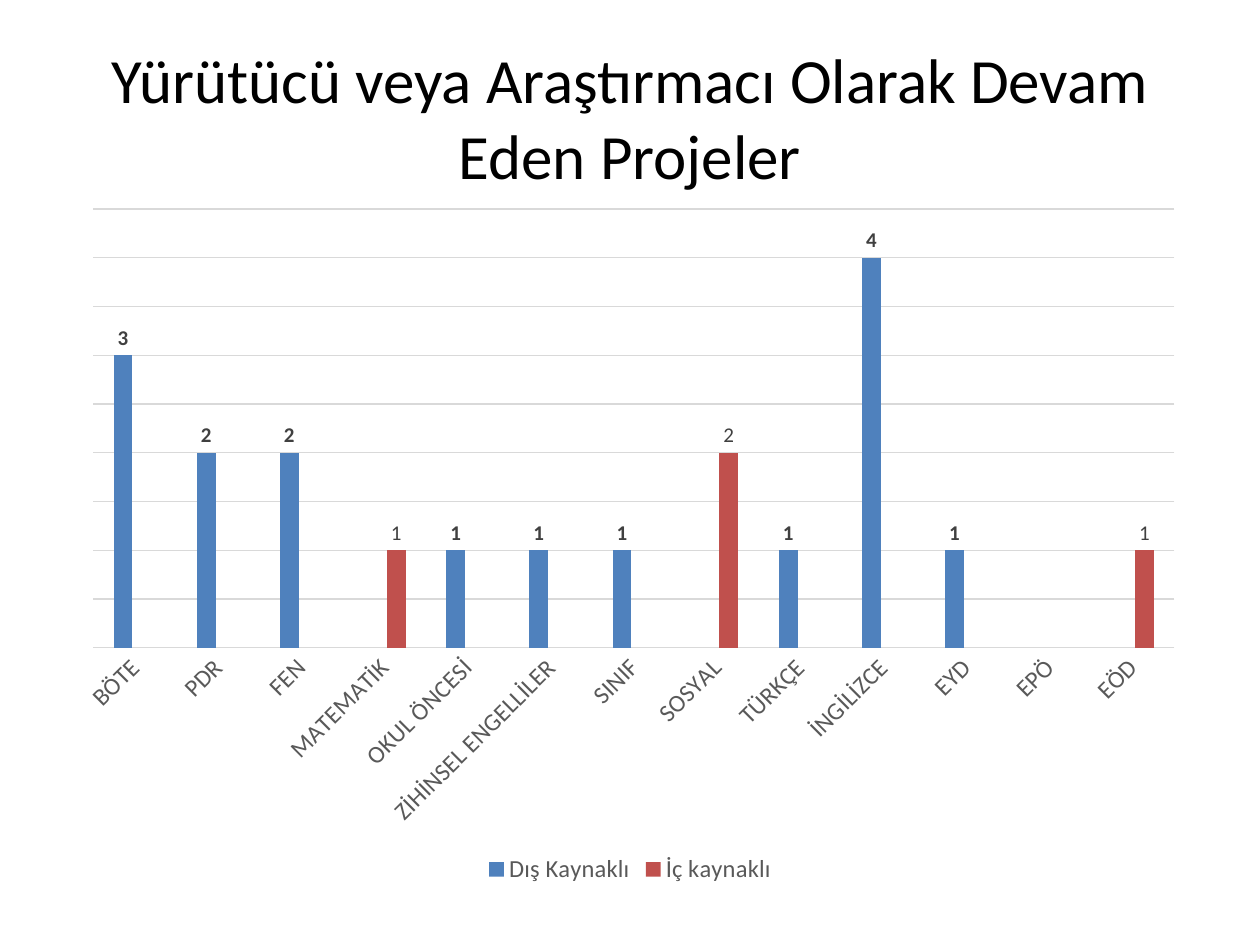
from dataclasses import dataclass

import pptx
import pptx.chart.data
import pptx.dml.color
import pptx.enum.chart
import pptx.enum.text
import pptx.util
from pptx.util import Pt


@dataclass(frozen=True)
class Theme:
    font: str = "Calibri"
    title: str = "000000"
    axis_text: str = "595959"
    label_text: str = "404040"
    grid: str = "D9D9D9"
    external: str = "4F81BD"
    internal: str = "C0504D"
    title_size: int = 36
    axis_size: int = 14
    label_size: int = 12


theme = Theme()


def set_font(font, size, color, bold=False):
    font.name = theme.font
    font.size = Pt(size)
    font.bold = bold
    font.color.rgb = pptx.dml.color.RGBColor.from_string(color)


def add_text(slide, text, *, left, top, width, height, size, color):
    """Add a wrapped text box, centred both ways."""
    shape = slide.shapes.add_textbox(Pt(left), Pt(top), Pt(width), Pt(height))
    frame = shape.text_frame
    frame.word_wrap = True
    frame.vertical_anchor = pptx.enum.text.MSO_ANCHOR.MIDDLE
    paragraph = frame.paragraphs[0]
    paragraph.alignment = pptx.enum.text.PP_ALIGN.CENTER
    run = paragraph.add_run()
    run.text = text
    set_font(run.font, size, color)


presentation = pptx.Presentation()
presentation.slide_width = Pt(720)
presentation.slide_height = Pt(540)
slide = presentation.slides.add_slide(presentation.slide_layouts[6])

add_text(slide, "Yürütücü veya Araştırmacı Olarak Devam Eden Projeler",
         left=36, top=21.6, width=648, height=90,
         size=theme.title_size, color=theme.title)

# Department, externally funded projects, internally funded projects
projects = [
    ("BÖTE", 3, None),
    ("PDR", 2, None),
    ("FEN", 2, None),
    ("MATEMATİK", None, 1),
    ("OKUL ÖNCESİ", 1, None),
    ("ZİHİNSEL ENGELLİLER", 1, None),
    ("SINIF", 1, None),
    ("SOSYAL", None, 2),
    ("TÜRKÇE", 1, None),
    ("İNGİLİZCE", 4, None),
    ("EYD", 1, None),
    ("EPÖ", None, None),
    ("EÖD", None, 1),
]
departments, external, internal = zip(*projects)
chart_data = pptx.chart.data.CategoryChartData()
chart_data.categories = departments
chart_data.add_series("Dış Kaynaklı", external)
chart_data.add_series("İç kaynaklı", internal)

chart = slide.shapes.add_chart(
    pptx.enum.chart.XL_CHART_TYPE.COLUMN_CLUSTERED,
    Pt(36), Pt(111.6), Pt(648), Pt(396.72), chart_data).chart
chart.has_title = False
set_font(chart.font, 10, theme.title)

chart.has_legend = True
chart.legend.position = pptx.enum.chart.XL_LEGEND_POSITION.BOTTOM
chart.legend.include_in_layout = False
set_font(chart.legend.font, theme.axis_size, theme.axis_text)

category_axis = chart.category_axis
category_axis.major_tick_mark = pptx.enum.chart.XL_TICK_MARK.NONE
set_font(category_axis.tick_labels.font, theme.axis_size, theme.axis_text)
label_body = category_axis.format and category_axis.tick_labels.font and \
    chart.category_axis._element.txPr.bodyPr
label_body.set("rot", "-2700000")
label_body.set("vert", "horz")

value_axis = chart.value_axis
value_axis.minimum_scale = 0
value_axis.maximum_scale = 4.5
value_axis.major_unit = 0.5
value_axis.has_major_gridlines = True
value_axis.visible = False

for line in (category_axis.format.line, value_axis.major_gridlines.format.line):
    line.width = Pt(0.75)
    line.color.rgb = pptx.dml.color.RGBColor.from_string(theme.grid)

plot = chart.plots[0]
plot.gap_width = 219
plot.overlap = -27
plot.vary_by_categories = False

series_styles = [(theme.external, True), (theme.internal, False)]
for series, (color, bold) in zip(plot.series, series_styles):
    series.invert_if_negative = False
    series.format.fill.solid()
    series.format.fill.fore_color.rgb = pptx.dml.color.RGBColor.from_string(color)
    labels = series.data_labels
    labels.show_value = True
    labels.position = pptx.enum.chart.XL_LABEL_POSITION.OUTSIDE_END
    set_font(labels.font, theme.label_size, theme.label_text, bold)

presentation.save("out.pptx")
